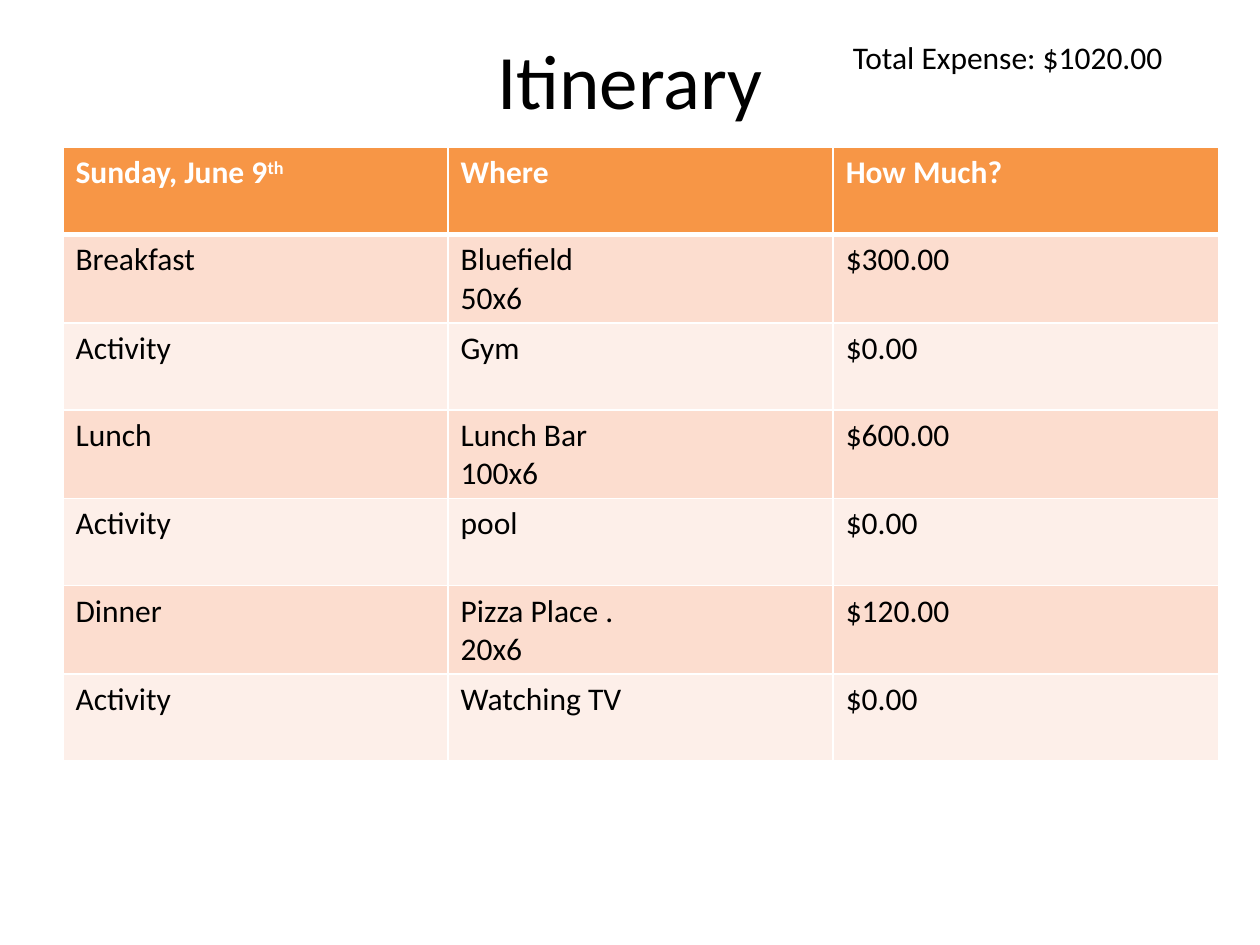
from lxml import etree
from pptx import Presentation
from pptx.dml.color import RGBColor
from pptx.enum.text import MSO_ANCHOR, MSO_AUTO_SIZE, PP_ALIGN
from pptx.oxml.ns import qn
from pptx.util import Inches, Pt

CENTER, LEFT = PP_ALIGN.CENTER, PP_ALIGN.LEFT
MIDDLE, TOP = MSO_ANCHOR.MIDDLE, MSO_ANCHOR.TOP
FIT = MSO_AUTO_SIZE.SHAPE_TO_FIT_TEXT
FONT = "Calibri"
BLACK, WHITE = "000000", "FFFFFF"
ORANGE, PEACH, PALE = "F79646", "FCDDCF", "FDEFE9"

HEADS = ["Sunday, June 9", "Where", "How Much?"]
PLANS = [
    ["Breakfast", "Bluefield\n50x6", "$300.00"],
    ["Activity", "Gym", "$0.00"],
    ["Lunch", "Lunch Bar\n100x6", "$600.00"],
    ["Activity", "pool", "$0.00"],
    ["Dinner", "Pizza Place .\n20x6", "$120.00"],
    ["Activity", "Watching TV", "$0.00"],
]


def color(code):
    return RGBColor.from_string(code)


def style(frame, size, code, bold=False):
    for para in frame.paragraphs:
        for run in para.runs:
            font = run.font
            font.name, font.size, font.bold = FONT, Pt(size), bold
            font.color.rgb = color(code)


def add_text(slide, box, text, size, align=LEFT, anchor=TOP):
    frame = slide.shapes.add_textbox(*map(Inches, box)).text_frame
    frame.word_wrap = True
    frame.vertical_anchor = anchor
    frame.text = text
    frame.paragraphs[0].alignment = align
    style(frame, size, BLACK)
    return frame


def add_border(cell, side, width):
    line = etree.SubElement(cell._tc.get_or_add_tcPr(), qn(f"a:ln{side}"), w=str(Pt(width)))
    fill = etree.SubElement(line, qn("a:solidFill"))
    etree.SubElement(fill, qn("a:srgbClr"), val=WHITE)


def add_plan(slide, box):
    """Fill the box with the day's table: a header row, then striped rows."""
    rows = [HEADS] + PLANS
    shape = slide.shapes.add_table(len(rows), len(HEADS), *map(Inches, box))
    table = shape.table
    for r, row in enumerate(rows):
        head = r == 0
        fill = ORANGE if head else PEACH if r % 2 else PALE
        widths = {"L": 1, "R": 1, "T": 3 if r == 1 else 1, "B": 3 if head else 1}
        for c, text in enumerate(row):
            cell = table.cell(r, c)
            for side, width in widths.items():
                add_border(cell, side, width)
            cell.fill.solid()
            cell.fill.fore_color.rgb = color(fill)
            cell.text_frame.text = text
            if r == c == 0:
                run = cell.text_frame.paragraphs[0].add_run()
                run.text = "th"
                run.font._element.set("baseline", "30000")
            style(cell.text_frame, 18, WHITE if head else BLACK, head)


def main():
    deck = Presentation()
    deck.slide_width, deck.slide_height = Inches(10), Inches(7.5)
    slide = deck.slides.add_slide(deck.slide_layouts[6])
    add_text(slide, (0.5, 0, 9, 1.25), "Itinerary", 44, CENTER, MIDDLE)
    total = add_text(slide, (6.67, 0.25, 3.08, 0.4), "Total Expense: $1020.00", 18)
    total.auto_size = FIT
    add_plan(slide, (0.5, 1.17, 9.17, 4.85))
    deck.save("out.pptx")


if __name__ == "__main__":
    main()
